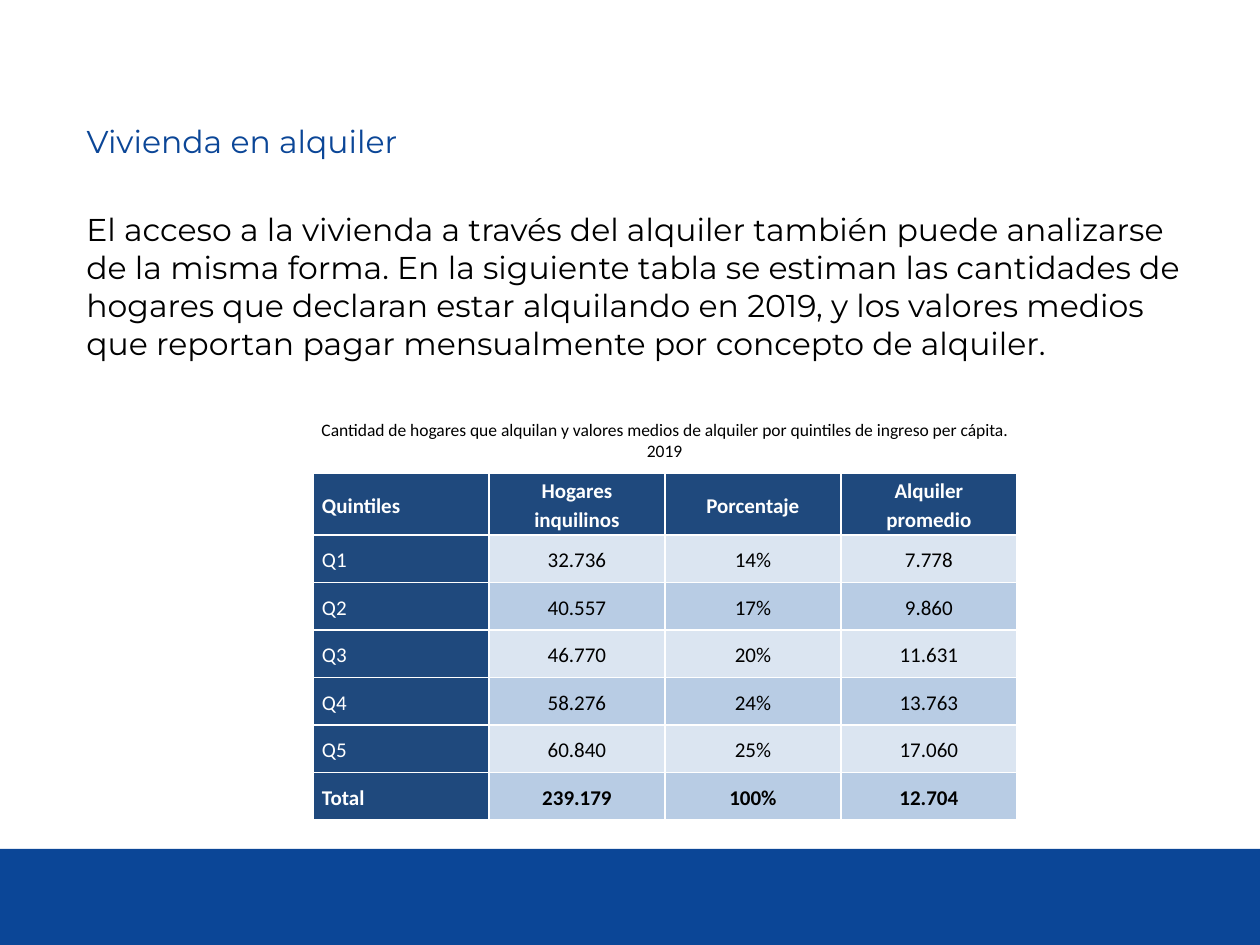
from pptx import Presentation
from pptx.dml.color import RGBColor as RGB
from pptx.enum.shapes import MSO_SHAPE as SHAPE
from pptx.enum.text import MSO_ANCHOR as ANCHOR, PP_ALIGN as ALIGN
from pptx.oxml import parse_xml
from pptx.oxml.ns import nsdecls
from pptx.util import Pt

PX = 914400 // 126  # EMU in one px
COLORS = {"blue": "0B4697", "navy": "1F497D", "pale": "DBE5F1",
          "light": "B8CCE4", "black": "000000", "white": "FFFFFF"}


def write(tf, text, font="Calibri", size=12, color="black", bold=False,
          align=ALIGN.LEFT, anchor=ANCHOR.TOP, spacing=None):
    tf.word_wrap = True
    tf.vertical_anchor = anchor
    p = tf.paragraphs[0]
    p.alignment = align
    p.line_spacing = spacing
    r = p.add_run()
    r.text = text
    r.font.name, r.font.size, r.font.bold = font, Pt(size), bold
    r.font.color.rgb = RGB.from_string(COLORS[color])


prs = Presentation()
prs.slide_width, prs.slide_height = 1260 * PX, 945 * PX
s = prs.slides.add_slide(prs.slide_layouts[5])

# Footer band
sp = s.shapes.add_shape(SHAPE.RECTANGLE, 0, 849 * PX, 1260 * PX, 96 * PX)
sp.shadow.inherit = False
sp.fill.solid()
sp.fill.fore_color.rgb = RGB.from_string(COLORS["blue"])
sp.line.fill.background()

# Title
title = s.shapes.title
title.left, title.top, title.width, title.height = 74 * PX, 116 * PX, 1133 * PX, 52 * PX
write(title.text_frame, "Vivienda en alquiler", font="Montserrat", size=18, color="blue")

# Body text
sp = s.shapes.add_textbox(74 * PX, 204 * PX, 1133 * PX, 166 * PX)
write(sp.text_frame,
      "El acceso a la vivienda a través del alquiler también puede analizarse de la misma "
      "forma. En la siguiente tabla se estiman las cantidades de hogares que declaran estar "
      "alquilando en 2019, y los valores medios que reportan pagar mensualmente por concepto "
      "de alquiler.", font="Montserrat", size=18)

# Table of tenants by income quintile
rows = [
    ("Quintiles", "Hogares inquilinos", "Porcentaje", "Alquiler promedio"),
    ("Q1", "32.736", "14%", "7.778"),
    ("Q2", "40.557", "17%", "9.860"),
    ("Q3", "46.770", "20%", "11.631"),
    ("Q4", "58.276", "24%", "13.763"),
    ("Q5", "60.840", "25%", "17.060"),
    ("Total", "239.179", "100%", "12.704"),
]
header_h, table_h = 62 * PX, 347 * PX
table = s.shapes.add_table(len(rows), 4, 313 * PX, 473 * PX, 704 * PX, table_h).table
for i, row in enumerate(rows):
    table.rows[i].height = header_h if i == 0 else (table_h - header_h) // (len(rows) - 1)
    for j, text in enumerate(row):
        cell = table.cell(i, j)
        dark = i == 0 or j == 0
        cell.margin_left = cell.margin_right = 9 * PX
        cell.margin_top = cell.margin_bottom = 0
        cell.vertical_anchor = ANCHOR.MIDDLE
        write(cell.text_frame, text, color="white" if dark else "black",
              bold=i in (0, len(rows) - 1), spacing=1.15, anchor=None,
              align=ALIGN.LEFT if j == 0 else ALIGN.CENTER)
        # White borders come before the fill in the cell properties
        for side in "LRTB":
            cell._tc.get_or_add_tcPr().append(parse_xml(
                f'<a:ln{side} {nsdecls("a")} w="12700"><a:solidFill>'
                f'<a:srgbClr val="{COLORS["white"]}"/></a:solidFill></a:ln{side}>'))
        cell.fill.solid()
        fill = "navy" if dark else "pale" if i % 2 else "light"
        cell.fill.fore_color.rgb = RGB.from_string(COLORS[fill])

# Table caption
sp = s.shapes.add_textbox(302 * PX, 413 * PX, 725 * PX, 57 * PX)
write(sp.text_frame,
      "Cantidad de hogares que alquilan y valores medios de alquiler por quintiles de "
      "ingreso per cápita. 2019", size=10, align=ALIGN.CENTER)

prs.save("out.pptx")
